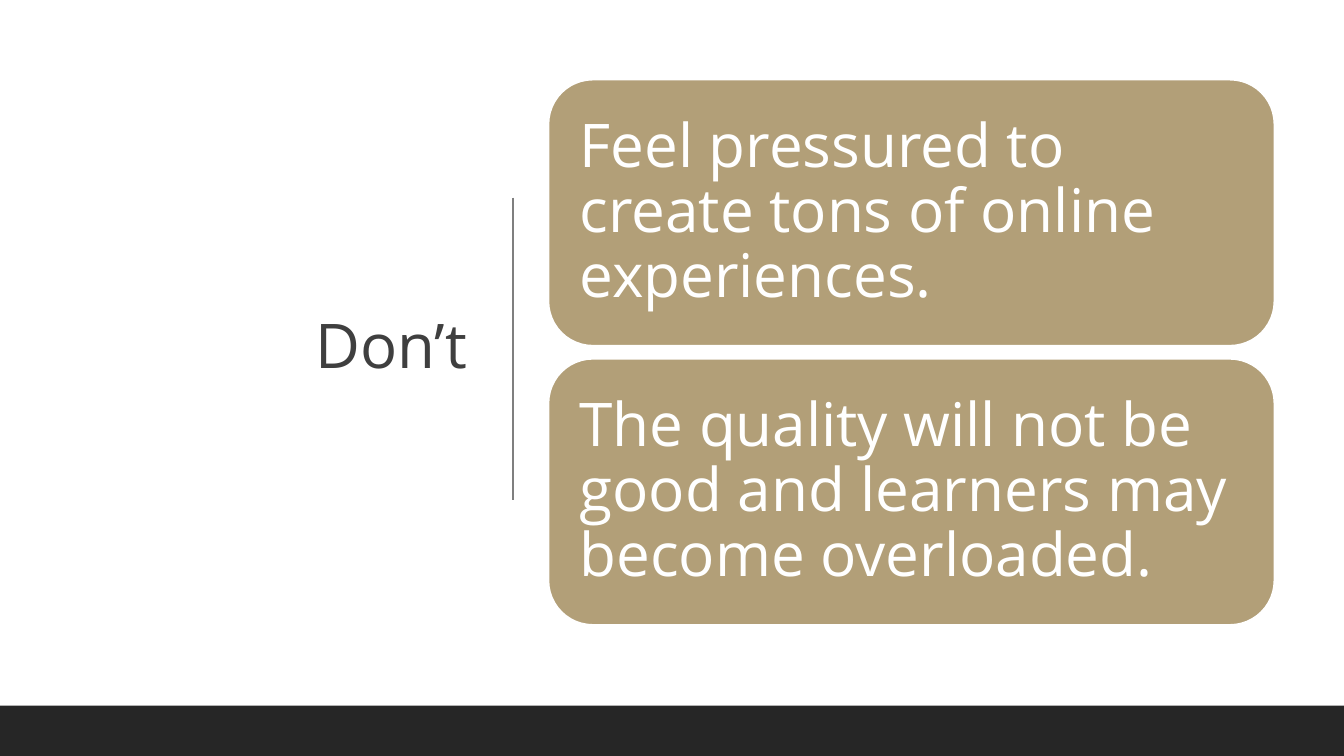
from dataclasses import dataclass

from lxml import etree
from pptx import Presentation
from pptx import util as u
from pptx.dml.color import RGBColor
from pptx.enum import shapes, text
from pptx.oxml.ns import qn


@dataclass(frozen=True)
class Theme:
    font: str = "Open Sans"
    paper: str = "FFFFFF"
    ink: str = "3F3F3F"
    rule: str = "7F7F7F"
    footer: str = "262626"
    card: str = "B29F78"
    title_size: float = 44
    card_size: float = 43
    line_spacing: float = 0.9


class SlideBuilder:
    def __init__(self, slide, theme):
        self.slide = slide
        self.theme = theme

    def _write(self, shape, words, size, color, align, insets):
        """Set one styled paragraph, with insets as (horizontal, vertical) inches."""
        frame = shape.text_frame
        frame.word_wrap = True
        frame.vertical_anchor = text.MSO_ANCHOR.MIDDLE
        frame.margin_left = frame.margin_right = u.Inches(insets[0])
        frame.margin_top = frame.margin_bottom = u.Inches(insets[1])
        frame.text = words
        paragraph = frame.paragraphs[0]
        paragraph.alignment = align
        paragraph.line_spacing = self.theme.line_spacing
        font = paragraph.runs[0].font
        font.name = self.theme.font
        font.size = u.Pt(size)
        font.color.rgb = RGBColor.from_string(color)

    def _filled(self, kind, box, color):
        shape = self.slide.shapes.add_shape(kind, *map(u.Inches, box))
        shape.shadow.inherit = False
        shape.fill.solid()
        shape.fill.fore_color.rgb = RGBColor.from_string(color)
        shape.line.fill.background()
        return shape

    def panel(self, box, color):
        self._filled(shapes.MSO_SHAPE.RECTANGLE, box, color)

    def title(self, box, words):
        heading = self.slide.shapes.add_textbox(*map(u.Inches, box))
        self._write(heading, words, self.theme.title_size, self.theme.ink,
                    text.PP_ALIGN.RIGHT, (0.1, 0.05))

    def divider(self, x, top, bottom):
        divider = self.slide.shapes.add_connector(
            shapes.MSO_CONNECTOR.STRAIGHT, *map(u.Inches, (x, top, x, bottom)))
        divider.line.color.rgb = RGBColor.from_string(self.theme.rule)
        divider.line.width = u.Pt(1)
        etree.SubElement(divider.element.spPr, qn("a:effectLst"))

    def card(self, box, words):
        card = self._filled(shapes.MSO_SHAPE.ROUNDED_RECTANGLE, box, self.theme.card)
        card.adjustments[0] = 0.167
        card.line.color.rgb = RGBColor.from_string(self.theme.paper)
        card.line.width = u.Pt(1.25)
        self._write(card, words, self.theme.card_size, self.theme.paper,
                    text.PP_ALIGN.LEFT, (0.18, 0.18))


def main():
    width, height = 13.33, 7.5
    footer_height = 0.5
    card_left, card_top, card_width, card_height = 5.44, 0.79, 7.2, 2.64
    card_gap = 0.13
    advice = (
        "Feel pressured to create tons of online experiences.",
        "The quality will not be good and learners may become overloaded.",
    )

    deck = Presentation()
    deck.slide_width, deck.slide_height = u.Inches(width), u.Inches(height)
    theme = Theme()
    builder = SlideBuilder(deck.slides.add_slide(deck.slide_layouts[6]), theme)

    builder.panel((0, 0, width, height), theme.paper)
    builder.title((0.7, 0.69, 4.03, 5.53), "Don’t")
    builder.divider(5.09, 1.96, 4.96)
    builder.panel((0, height - footer_height, width, footer_height), theme.footer)
    for row, words in enumerate(advice):
        top = card_top + row * (card_height + card_gap)
        builder.card((card_left, top, card_width, card_height), words)

    deck.save("out.pptx")


if __name__ == "__main__":
    main()
